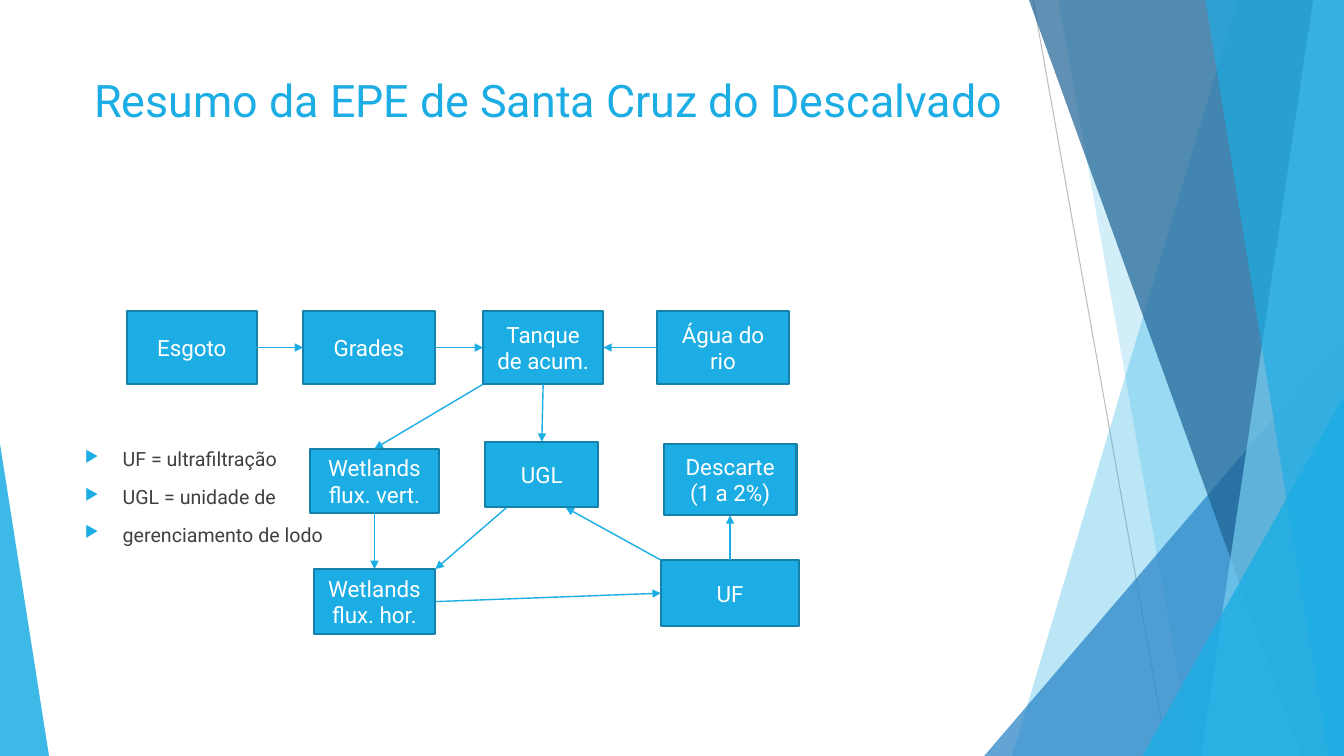
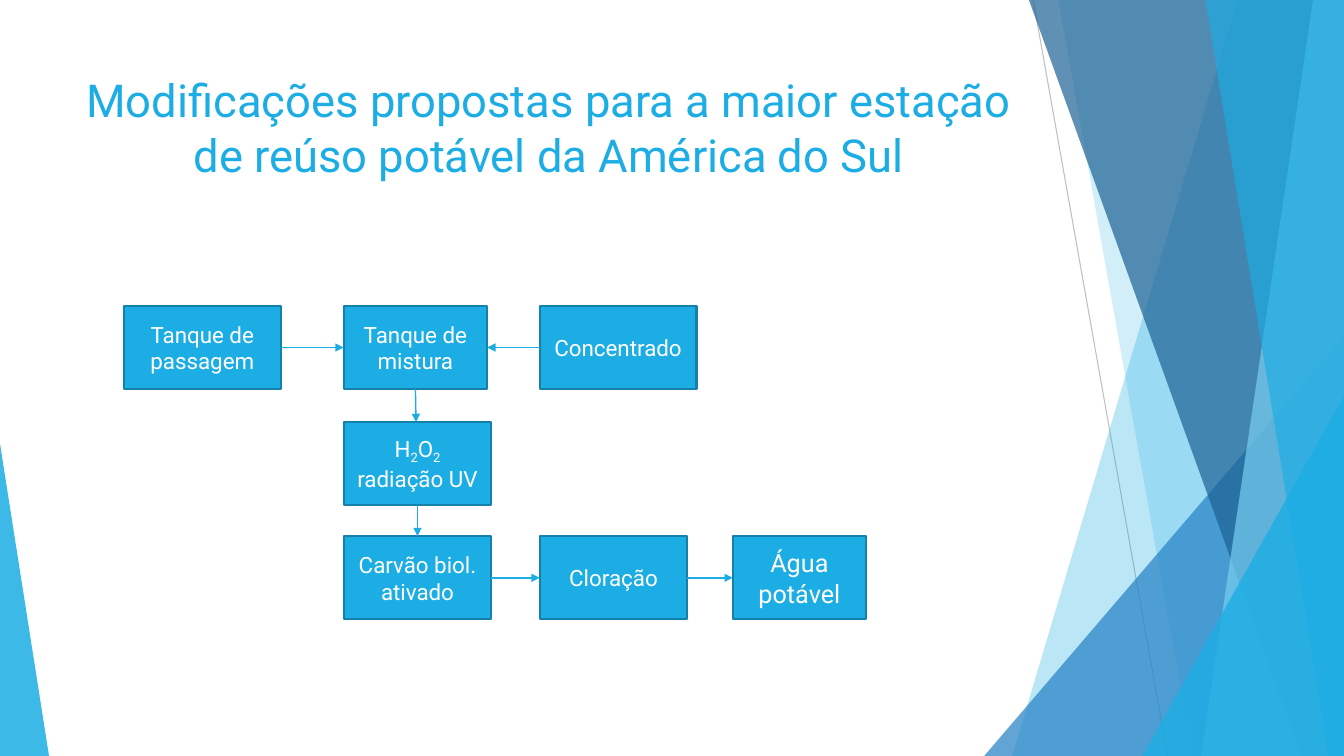
from dataclasses import dataclass

from lxml.etree import SubElement
from pptx import Presentation
from pptx.dml.color import RGBColor
from pptx.enum.shapes import MSO_CONNECTOR, MSO_SHAPE
from pptx.enum.text import MSO_ANCHOR, MSO_AUTO_SIZE, PP_ALIGN
from pptx.oxml.ns import qn
from pptx.util import Pt

WIDTH, HEIGHT = 960, 540
FONT = "Roboto"
BLUE, DARK_BLUE, MID_BLUE = "1CADE4", "1D6294", "2683C6"
PALE_BLUE, BORDER, GREY = "77CEEF", "1580A9", "BFBFBF"
TEXT, WHITE = "404040", "FFFFFF"

# Anchors are fractions of a box's width and height.
TOP, LEFT, BOTTOM, RIGHT = (0.5, 0), (0, 0.5), (0.5, 1), (1, 0.5)
TOP_LEFT, TOP_RIGHT, BOTTOM_LEFT = (0, 0), (1, 0), (0, 1)
CONNECTION_SITES = {TOP: 0, LEFT: 1, BOTTOM: 2, RIGHT: 3}


@dataclass(frozen=True)
class Shard:
    """A band from its slanted left edge to the right side of the slide."""
    top_x: float
    bottom_x: float
    colour: str
    opacity: int


@dataclass(frozen=True)
class Wedge:
    """A triangle standing on the bottom of the slide."""
    left: float
    top: float
    width: float
    apex: float
    colour: str
    opacity: int


@dataclass(frozen=True)
class Box:
    """A step of the process; text between underscores is subscript."""
    text: str
    left: float
    top: float
    width: float
    height: float
    size: float = 16

    def point(self, anchor: tuple) -> tuple:
        return (Pt(self.left + anchor[0] * self.width),
                Pt(self.top + anchor[1] * self.height))


@dataclass(frozen=True)
class Arrow:
    source: str
    source_anchor: tuple
    target: str
    target_anchor: tuple


@dataclass(frozen=True)
class FlowSlide:
    title: str
    title_size: float
    boxes: dict
    arrows: tuple
    abbreviations: tuple = ()


DECORATION = (
    Shard(884, 723, BLUE, 30),
    Shard(756, 852, BLUE, 20),
    Wedge(703, 240, 257, 1, MID_BLUE, 72),
    Shard(735, 930, DARK_BLUE, 70),
    Shard(938, 858, PALE_BLUE, 70),
    Shard(861, 949, BLUE, 65),
    Wedge(816, 283, 144, 1, BLUE, 80),
    Wedge(0, 317, 35, 0, BLUE, 85),
)

SUMMARY = FlowSlide(
    "Resumo da EPE de Santa Cruz do Descalvado", 32,
    {
        "sewage": Box("Esgoto", 90.5, 222, 93, 52.5),
        "screens": Box("Grades", 216.5, 222, 94, 52.5),
        "tank": Box("Tanque de acum.", 345, 222, 86, 52.5),
        "river": Box("Água do rio", 469.5, 222, 94, 52.5),
        "sludge": Box("UGL", 346.5, 315.5, 81, 47),
        "discard": Box("Descarte (1 a 2%)", 474, 317, 95, 51),
        "vertical": Box("Wetlands flux. vert.", 221.5, 320.5, 92, 46),
        "filter": Box("UF", 472, 400, 99, 47.5),
        "horizontal": Box("Wetlands flux. hor.", 224, 406.5, 87, 46.5),
    },
    (
        Arrow("sewage", RIGHT, "screens", LEFT),
        Arrow("screens", RIGHT, "tank", LEFT),
        Arrow("river", LEFT, "tank", RIGHT),
        Arrow("tank", BOTTOM_LEFT, "vertical", TOP),
        Arrow("tank", BOTTOM, "sludge", TOP),
        Arrow("vertical", BOTTOM, "horizontal", TOP),
        Arrow("sludge", (0.19, 1), "horizontal", TOP_RIGHT),
        Arrow("horizontal", RIGHT, "filter", LEFT),
        Arrow("filter", TOP_LEFT, "sludge", (0.71, 1)),
        Arrow("filter", TOP, "discard", BOTTOM),
    ),
    ("UF = ultrafiltração", "UGL = unidade de", "gerenciamento de lodo"),
)

PROPOSAL = FlowSlide(
    "Modificações propostas para a maior estação "
    "de reúso potável da América do Sul", 32.4,
    {
        "passage": Box("Tanque de passagem", 88.5, 218.5, 112, 59.5),
        "mixing": Box("Tanque de mistura", 245.5, 218.5, 102.5, 59.5),
        "concentrate": Box("Concentrado", 385.5, 218.5, 112, 59.5),
        "peroxide": Box("H_2_O_2_ radiação UV", 245.5, 301.5, 105.5, 59),
        "carbon": Box("Carvão biol. ativado", 245.5, 383, 105.5, 59.5),
        "chlorine": Box("Cloração", 385.5, 383, 105.5, 59.5),
        "water": Box("Água potável", 523.5, 383, 95, 59.5, 18),
    },
    (
        Arrow("passage", RIGHT, "mixing", LEFT),
        Arrow("concentrate", LEFT, "mixing", RIGHT),
        Arrow("mixing", BOTTOM, "peroxide", (0.49, 0)),
        Arrow("peroxide", BOTTOM, "carbon", TOP),
        Arrow("carbon", RIGHT, "chlorine", LEFT),
        Arrow("chlorine", RIGHT, "water", LEFT),
    ),
)


def rgb(colour: str) -> RGBColor:
    return RGBColor.from_string(colour)


def format_runs(paragraph, size: float, colour: str) -> None:
    for run in paragraph.runs:
        run.font.name = FONT
        run.font.size = Pt(size)
        run.font.color.rgb = rgb(colour)


def fill_shape(shape, colour: str, opacity: int = 100) -> None:
    shape.shadow.inherit = False
    shape.fill.solid()
    shape.fill.fore_color.rgb = rgb(colour)
    if opacity < 100:
        colour_element = shape.element.spPr.find(".//" + qn("a:srgbClr"))
        SubElement(colour_element, qn("a:alpha"), val=str(opacity * 1000))


def add_line(slide, start: tuple, end: tuple, colour: str, width: float):
    line = slide.shapes.add_connector(MSO_CONNECTOR.STRAIGHT, *start, *end)
    line.line.color.rgb = rgb(colour)
    line.line.width = Pt(width)
    SubElement(line.element.spPr, qn("a:effectLst"))
    return line


def add_decoration(slide) -> None:
    add_line(slide, (Pt(738), 0), (Pt(834), Pt(HEIGHT)), GREY, 0.75)
    for part in DECORATION:
        if isinstance(part, Shard):
            builder = slide.shapes.build_freeform(part.top_x, 0, scale=Pt(1))
            builder.add_line_segments(
                [(WIDTH, 0), (WIDTH, HEIGHT), (part.bottom_x, HEIGHT)])
            shape = builder.convert_to_shape()
        else:
            shape = slide.shapes.add_shape(
                MSO_SHAPE.ISOSCELES_TRIANGLE, Pt(part.left), Pt(part.top),
                Pt(part.width), Pt(HEIGHT - part.top))
            shape.adjustments[0] = part.apex
        fill_shape(shape, part.colour, part.opacity)
        shape.line.fill.background()


def set_title(slide, text: str, size: float) -> None:
    title = slide.shapes.title
    title.left, title.top = Pt(53.5), Pt(48)
    title.width, title.height = Pt(677), Pt(104)
    frame = title.text_frame
    frame.text = text
    frame.word_wrap = True
    frame.auto_size = MSO_AUTO_SIZE.NONE
    frame.vertical_anchor = MSO_ANCHOR.TOP
    frame.paragraphs[0].alignment = PP_ALIGN.CENTER
    format_runs(frame.paragraphs[0], size, BLUE)


def add_box(slide, box: Box):
    shape = slide.shapes.add_shape(
        MSO_SHAPE.RECTANGLE, Pt(box.left), Pt(box.top),
        Pt(box.width), Pt(box.height))
    fill_shape(shape, BLUE)
    shape.line.color.rgb = rgb(BORDER)
    shape.line.width = Pt(1.5)
    frame = shape.text_frame
    frame.word_wrap = True
    frame.vertical_anchor = MSO_ANCHOR.MIDDLE
    paragraph = frame.paragraphs[0]
    paragraph.alignment = PP_ALIGN.CENTER
    for index, piece in enumerate(box.text.split("_")):
        run = paragraph.add_run()
        run.text = piece
        if index % 2:
            run.font.subscript = True
            run._r.get_or_add_rPr().set("baseline", "-25000")
    format_runs(paragraph, box.size, WHITE)
    return shape


def add_arrow(slide, arrow: Arrow, boxes: dict, shapes: dict) -> None:
    """Draw the arrow, gluing each end that lies on a connection site."""
    line = add_line(slide, boxes[arrow.source].point(arrow.source_anchor),
                    boxes[arrow.target].point(arrow.target_anchor), BLUE, 1)
    SubElement(line.element.spPr.find(qn("a:ln")), qn("a:tailEnd"),
               type="triangle")
    if arrow.source_anchor in CONNECTION_SITES:
        line.begin_connect(shapes[arrow.source],
                           CONNECTION_SITES[arrow.source_anchor])
    if arrow.target_anchor in CONNECTION_SITES:
        line.end_connect(shapes[arrow.target],
                         CONNECTION_SITES[arrow.target_anchor])


def add_abbreviations(slide, lines: tuple) -> None:
    frame = slide.shapes.add_textbox(
        Pt(53.5), Pt(316), Pt(190), Pt(84)).text_frame
    frame.word_wrap = True
    frame.text = "\n".join(lines)
    for paragraph in frame.paragraphs:
        paragraph.space_after = Pt(10)
        format_runs(paragraph, 14, TEXT)
        properties = paragraph._p.get_or_add_pPr()
        properties.set("marL", str(Pt(27)))
        properties.set("indent", str(Pt(-27)))
        bullet_colour = SubElement(properties, qn("a:buClr"))
        SubElement(bullet_colour, qn("a:srgbClr"), val=BLUE)
        SubElement(properties, qn("a:buSzPct"), val="80000")
        SubElement(properties, qn("a:buChar"), char="▶")


def add_flow_slide(presentation, content: FlowSlide) -> None:
    slide = presentation.slides.add_slide(presentation.slide_layouts[5])
    add_decoration(slide)
    set_title(slide, content.title, content.title_size)
    if content.abbreviations:
        add_abbreviations(slide, content.abbreviations)
    shapes = {name: add_box(slide, box) for name, box in content.boxes.items()}
    for arrow in content.arrows:
        add_arrow(slide, arrow, content.boxes, shapes)


def main() -> None:
    presentation = Presentation()
    presentation.slide_width, presentation.slide_height = Pt(WIDTH), Pt(HEIGHT)
    for content in (SUMMARY, PROPOSAL):
        add_flow_slide(presentation, content)
    presentation.save("out.pptx")


if __name__ == "__main__":
    main()
